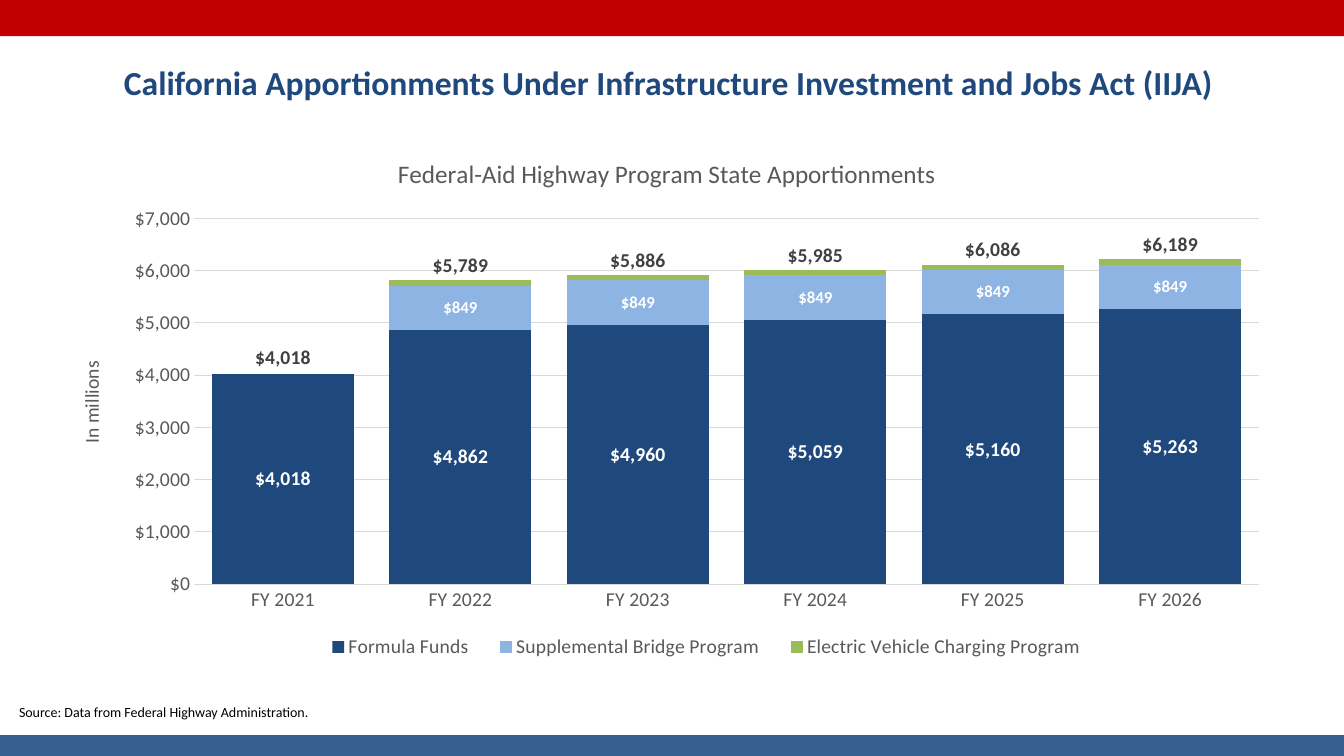
from copy import deepcopy

from lxml import etree
from pptx import Presentation
from pptx import util as u
from pptx.chart.data import CategoryChartData
from pptx.dml.color import RGBColor
from pptx.enum import chart as ch, shapes, text
from pptx.oxml import parse_xml
from pptx.oxml.ns import nsdecls, qn

COLORS = {
    "red": "C00000", "blue": "376092", "edge": "3A5F8C", "navy": "1F497D",
    "sky": "8EB4E3", "green": "9BBB59", "grey": "595959", "dark": "404040",
    "rule": "D9D9D9", "white": "FFFFFF", "black": "000000",
}
FONT = "Calibri"
DOLLARS = '"$"#,##0'
YEARS = [f"FY {year}" for year in range(2021, 2027)]
FUNDS = {
    "Formula Funds": ("navy", [4018, 4862, 4960, 5059, 5160, 5263]),
    "Supplemental Bridge Program": ("sky", [0] + [849] * 5),
    "Electric Vehicle Charging Program": ("green", [0] + [100] * 5),
    "Total": (None, [4018, 5789, 5886, 5985, 6086, 6189]),
}


def rgb(name):
    """Return the named colour."""
    return RGBColor.from_string(COLORS[name])


def style(font, size, color, bold=False):
    """Set face, size, colour and weight of a font."""
    font.name, font.size, font.bold = FONT, u.Pt(size), bold
    font.color.rgb = rgb(color)


def write(frame, words, size, color, bold=False, align=None):
    """Put one formatted paragraph in a text frame."""
    paragraph = frame.paragraphs[0]
    paragraph.alignment = align
    run = paragraph.add_run()
    run.text = words
    style(run.font, size, color, bold)


def add_band(slide, box, fill, edge=None):
    """Draw a full-width colour band."""
    band = slide.shapes.add_shape(shapes.MSO_SHAPE.RECTANGLE, *map(u.Inches, box))
    band.shadow.inherit = False
    band.fill.solid()
    band.fill.fore_color.rgb = rgb(fill)
    if edge:
        band.line.color.rgb = rgb(edge)
        band.line.width = u.Pt(2)
    else:
        band.line.fill.background()


def add_caption(slide, box, words, **look):
    """Place a wrapping line of text in the box."""
    caption = slide.shapes.add_textbox(*map(u.Inches, box))
    caption.text_frame.word_wrap = True
    write(caption.text_frame, words, **look)


def place(part, index, inner=False, **spots):
    """Give a chart part a manual layout as fractions of the chart."""
    for old in part.findall(qn("c:layout")):
        part.remove(old)
    layout = etree.Element(qn("c:layout"))
    manual = etree.SubElement(layout, qn("c:manualLayout"))
    if inner:
        etree.SubElement(manual, qn("c:layoutTarget")).set("val", "inner")
    for mode in ("xMode", "yMode"):
        etree.SubElement(manual, qn(f"c:{mode}")).set("val", "edge")
    for key, value in spots.items():
        etree.SubElement(manual, qn(f"c:{key}")).set("val", str(value))
    part.insert(index, layout)


def label(series, size, color, position):
    """Show bold dollar values on a series."""
    labels = series.data_labels
    labels.show_value = True
    labels.number_format, labels.number_format_is_linked = DOLLARS, False
    labels.position = position
    style(labels.font, size, color, True)


def format_axes(chart):
    """Style the year and dollar axes."""
    years, dollars = chart.category_axis, chart.value_axis
    for axis in (years, dollars):
        axis.major_tick_mark = axis.minor_tick_mark = ch.XL_TICK_MARK.NONE
        style(axis.tick_labels.font, 14, "grey")
    dollars.minimum_scale, dollars.maximum_scale, dollars.major_unit = 0, 7000, 1000
    dollars.tick_labels.number_format = DOLLARS
    dollars.tick_labels.number_format_is_linked = False
    dollars.format.line.fill.background()
    for line in (years.format.line, dollars.major_gridlines.format.line):
        line.color.rgb = rgb("rule")
        line.width = u.Pt(0.75)


def split_totals(chart):
    """Move the totals to a clustered plot on hidden second axes."""
    stacked = chart.element.xpath(".//c:barChart")[0]
    totals = deepcopy(stacked)
    stacked.remove(stacked.findall(qn("c:ser"))[-1])
    for fund in totals.findall(qn("c:ser"))[:-1]:
        totals.remove(fund)
    totals.find(qn("c:grouping")).set("val", "clustered")
    totals.remove(totals.find(qn("c:overlap")))
    stacked.addnext(totals)
    axes = chart.element.xpath(".//c:catAx | .//c:valAx")
    ids = {axis.find(qn("c:axId")).get("val"): str(number)
           for number, axis in enumerate(axes, 5001)}
    seconds = [deepcopy(axis) for axis in axes]
    for second in reversed(seconds):
        second.find(qn("c:delete")).set("val", "1")
        for extra in second.xpath("./c:majorGridlines | ./c:title"):
            second.remove(extra)
        axes[-1].addnext(second)
    seconds[1].find(qn("c:axPos")).set("val", "r")
    seconds[1].find(qn("c:crosses")).set("val", "max")
    for part in [totals] + seconds:
        for ref in part.xpath("./c:axId | ./c:crossAx"):
            ref.set("val", ids[ref.get("val")])


def add_apportionments(slide, box):
    """Chart the funds by year, with totals above the columns."""
    data = CategoryChartData(number_format=DOLLARS)
    data.categories = YEARS
    for name, (_, amounts) in FUNDS.items():
        data.add_series(name, amounts)
    chart = slide.shapes.add_chart(
        ch.XL_CHART_TYPE.COLUMN_STACKED, *map(u.Inches, box), data).chart
    style(chart.font, 10, "black")
    plot = chart.plots[0]
    plot.vary_by_categories, plot.gap_width, plot.overlap = False, 25, 100
    for series, (color, _) in zip(plot.series, FUNDS.values()):
        if color:
            series.format.fill.solid()
            series.format.fill.fore_color.rgb = rgb(color)
        else:
            series.format.fill.background()
    formula, bridge, _, total = plot.series
    label(formula, 14, "white", ch.XL_LABEL_POSITION.CENTER)
    label(bridge, 12, "white", ch.XL_LABEL_POSITION.CENTER)
    label(total, 14, "dark", ch.XL_LABEL_POSITION.OUTSIDE_END)
    chart.element.xpath(".//c:ser[2]/c:dLbls")[0].insert(0, parse_xml(
        f'<c:dLbl {nsdecls("c")}><c:idx val="0"/><c:delete val="1"/></c:dLbl>'))

    format_axes(chart)
    chart.has_title = True
    write(chart.chart_title.text_frame,
          "Federal-Aid Highway Program State Apportionments", 18, "grey")
    units = chart.value_axis.axis_title.text_frame
    write(units, "In millions", 14, "grey")
    chart.has_legend = True
    chart.legend.position = ch.XL_LEGEND_POSITION.BOTTOM
    chart.legend.include_in_layout = False
    style(chart.legend.font, 14, "grey")

    legend = chart.element.xpath(".//c:legend")[0]
    legend.insert(1, parse_xml(
        f'<c:legendEntry {nsdecls("c")}><c:idx val="3"/><c:delete val="1"/></c:legendEntry>'))
    place(legend, 2, x=0.21, y=0.92, w=0.65, h=0.07)
    heading = chart.element.xpath("./c:chart/c:title")[0]
    place(heading, 1, x=0.28, y=0.04)
    side = chart.element.xpath(".//c:valAx/c:title")[0]
    side.xpath(".//a:bodyPr")[0].set("rot", "-5400000")
    place(side, 1, x=0.02, y=0.42)
    split_totals(chart)
    place(chart.element.xpath(".//c:plotArea")[0], 0, True,
          x=0.118, y=0.163, w=0.867, h=0.676)


def main():
    """Build and save the slide."""
    deck = Presentation()
    deck.slide_width, deck.slide_height = u.Inches(13.33), u.Inches(7.5)
    slide = deck.slides.add_slide(deck.slide_layouts[6])
    add_band(slide, (0, 0, 13.33, 0.36), "red")
    add_band(slide, (0, 7.31, 13.33, 0.19), "blue", "edge")
    add_apportionments(slide, (0.49, 1.29, 12.18, 5.37))
    add_caption(slide, (0.14, 0.57, 12.98, 0.5),
                "California Apportionments Under Infrastructure Investment and Jobs Act (IIJA)",
                size=24, color="navy", bold=True, align=text.PP_ALIGN.CENTER)
    add_caption(slide, (0.09, 6.93, 12.98, 0.27),
                "Source: Data from Federal Highway Administration.",
                size=10, color="black")
    deck.save("out.pptx")


if __name__ == "__main__":
    main()
